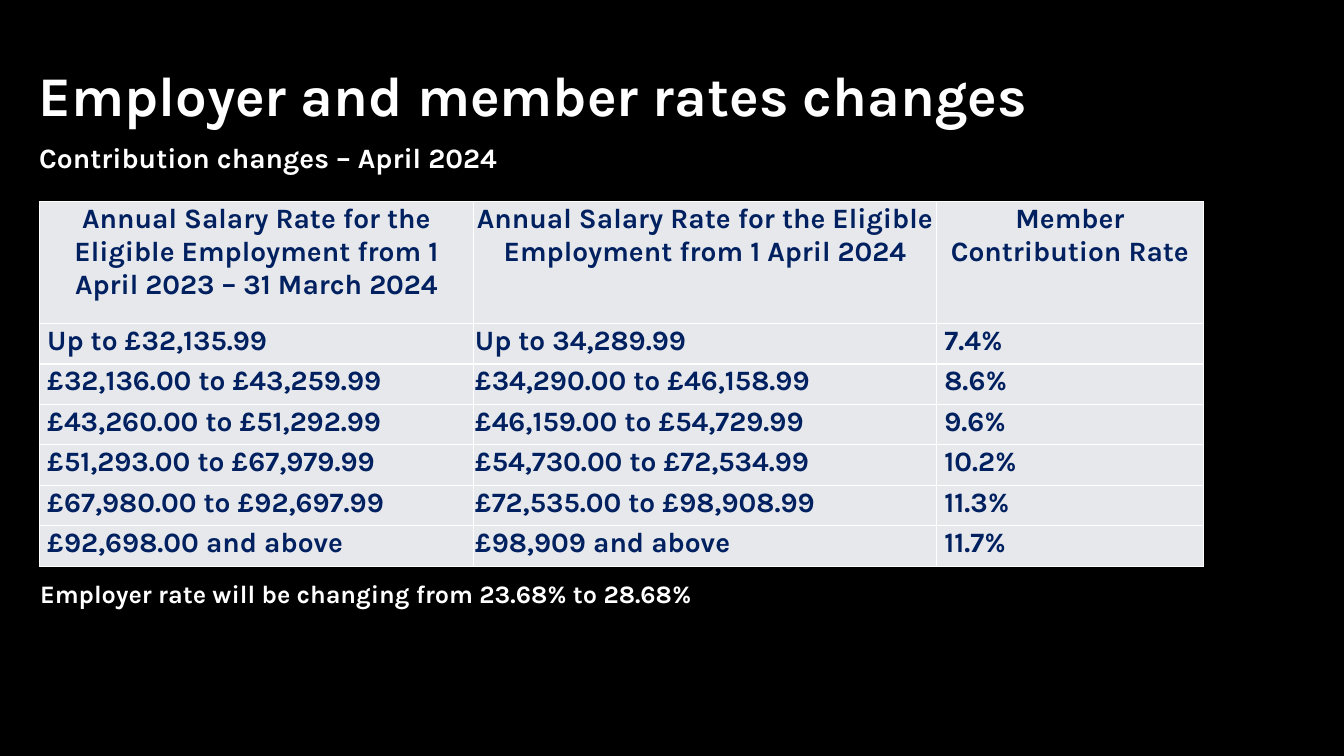
from dataclasses import dataclass

from lxml.etree import SubElement
from pptx import Presentation
from pptx.dml.color import RGBColor
from pptx.enum.text import MSO_ANCHOR, PP_ALIGN
from pptx.oxml.ns import qn
from pptx.util import Cm, Pt

BLACK = RGBColor(0x00, 0x00, 0x00)
WHITE = RGBColor(0xFF, 0xFF, 0xFF)
NAVY = RGBColor(0x00, 0x20, 0x60)
PALE_GREY = RGBColor(0xE7, 0xE8, 0xEB)


@dataclass(frozen=True)
class Label:
    """A white line of text with its box in centimetres."""

    text: str
    left: float
    top: float
    width: float
    height: float
    size: int
    anchor: MSO_ANCHOR = MSO_ANCHOR.TOP
    side_inset: float = 0
    end_inset: float = 0
    line_spacing: float = 1.0


@dataclass(frozen=True)
class Column:
    """A table column with its width and body indent in centimetres."""

    heading: str
    width: float
    indent: float


LABELS = [
    Label("Employer and member rates changes", 0.97, 1.55, 27.66, 1.68, 40,
          anchor=MSO_ANCHOR.BOTTOM, line_spacing=0.9),
    Label("Contribution changes – April 2024", 0.99, 3.53, 29.74, 11.61, 20),
    Label("Employer rate will be changing from 23.68% to 28.68%",
          0.76, 14.45, 17.2, 1.02, 18, side_inset=0.25, end_inset=0.13),
]
COLUMNS = [
    Column("Annual Salary Rate for the Eligible Employment from "
           "1 April 2023 – 31 March 2024", 10.95, 0.2),
    Column("Annual Salary Rate for the Eligible Employment from 1 April 2024",
           11.66, 0.03),
    Column("Member Contribution Rate", 6.73, 0.2),
]
RATES = [
    ("Up to £32,135.99", "Up to 34,289.99", "7.4%"),
    ("£32,136.00 to £43,259.99", "£34,290.00 to £46,158.99", "8.6%"),
    ("£43,260.00 to £51,292.99", "£46,159.00 to £54,729.99", "9.6%"),
    ("£51,293.00 to £67,979.99", "£54,730.00 to £72,534.99", "10.2%"),
    ("£67,980.00 to £92,697.99", "£72,535.00 to £98,908.99", "11.3%"),
    ("£92,698.00 and above", "£98,909 and above", "11.7%"),
]
TABLE_LEFT, TABLE_TOP = 0.99, 5.08
HEADING_HEIGHT, ROW_HEIGHT = 3.07, 1.02
CELL_INSET = 0.03


def apply_format(target, values: dict) -> None:
    """Set each named attribute of the target."""
    for name, value in values.items():
        setattr(target, name, value)


def write_text(paragraph, text: str, size: int, color: RGBColor) -> None:
    """Add one bold Karla span to a paragraph."""
    span = paragraph.add_run()
    span.text = text
    apply_format(span.font, {"name": "Karla", "size": Pt(size), "bold": True})
    span.font.color.rgb = color


def add_label(page, label: Label) -> None:
    """Draw a label as a text box."""
    box = page.shapes.add_textbox(Cm(label.left), Cm(label.top),
                                  Cm(label.width), Cm(label.height))
    apply_format(box.text_frame, {
        "word_wrap": True,
        "vertical_anchor": label.anchor,
        "margin_left": Cm(label.side_inset),
        "margin_right": Cm(label.side_inset),
        "margin_top": Cm(label.end_inset),
        "margin_bottom": Cm(label.end_inset),
    })
    para = box.text_frame.paragraphs[0]
    para.line_spacing = label.line_spacing
    write_text(para, label.text, label.size, WHITE)


def add_borders(cell) -> None:
    """Give a cell thin white borders on all sides."""
    properties = cell._tc.get_or_add_tcPr()
    for side in ("lnL", "lnR", "lnT", "lnB"):
        line = SubElement(properties, qn(f"a:{side}"), w=str(Pt(1)))
        fill = SubElement(line, qn("a:solidFill"))
        SubElement(fill, qn("a:srgbClr"), val=str(WHITE))


def fill_cell(cell, text: str, indent: float, alignment: PP_ALIGN) -> None:
    """Style a table cell and write its text."""
    add_borders(cell)
    cell.fill.solid()
    cell.fill.fore_color.rgb = PALE_GREY
    apply_format(cell, {
        "margin_left": Cm(indent),
        "margin_right": Cm(CELL_INSET),
        "margin_top": Cm(CELL_INSET),
        "margin_bottom": Cm(0),
    })
    para = cell.text_frame.paragraphs[0]
    para.alignment = alignment
    write_text(para, text, 20, NAVY)


def add_rates_table(page) -> None:
    """Draw the table of salary bands and contribution rates."""
    heights = [HEADING_HEIGHT] + [ROW_HEIGHT] * len(RATES)
    width = sum(column.width for column in COLUMNS)
    table = page.shapes.add_table(
        len(heights), len(COLUMNS), Cm(TABLE_LEFT), Cm(TABLE_TOP),
        Cm(width), Cm(sum(heights))).table
    for row, height in zip(table.rows, heights):
        row.height = Cm(height)
    for index, column in enumerate(COLUMNS):
        table.columns[index].width = Cm(column.width)
        fill_cell(table.cell(0, index), column.heading, CELL_INSET,
                  PP_ALIGN.CENTER)
        for number, rates in enumerate(RATES, start=1):
            fill_cell(table.cell(number, index), rates[index], column.indent,
                      PP_ALIGN.LEFT)


def main() -> None:
    """Build and save the deck."""
    deck = Presentation()
    apply_format(deck, {"slide_width": Cm(33.87), "slide_height": Cm(19.05)})
    page = deck.slides.add_slide(deck.slide_layouts[6])
    page.background.fill.solid()
    page.background.fill.fore_color.rgb = BLACK
    for label in LABELS:
        add_label(page, label)
    add_rates_table(page)
    deck.save("out.pptx")


if __name__ == "__main__":
    main()
